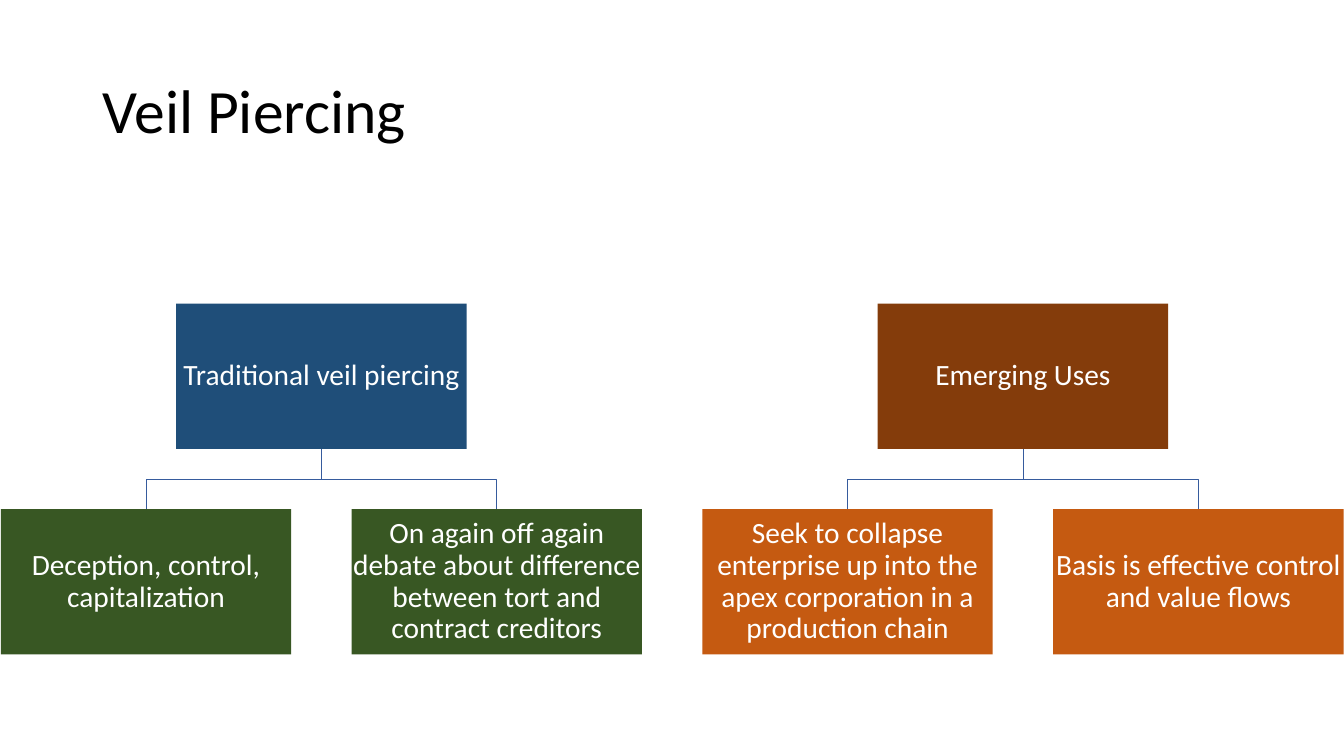
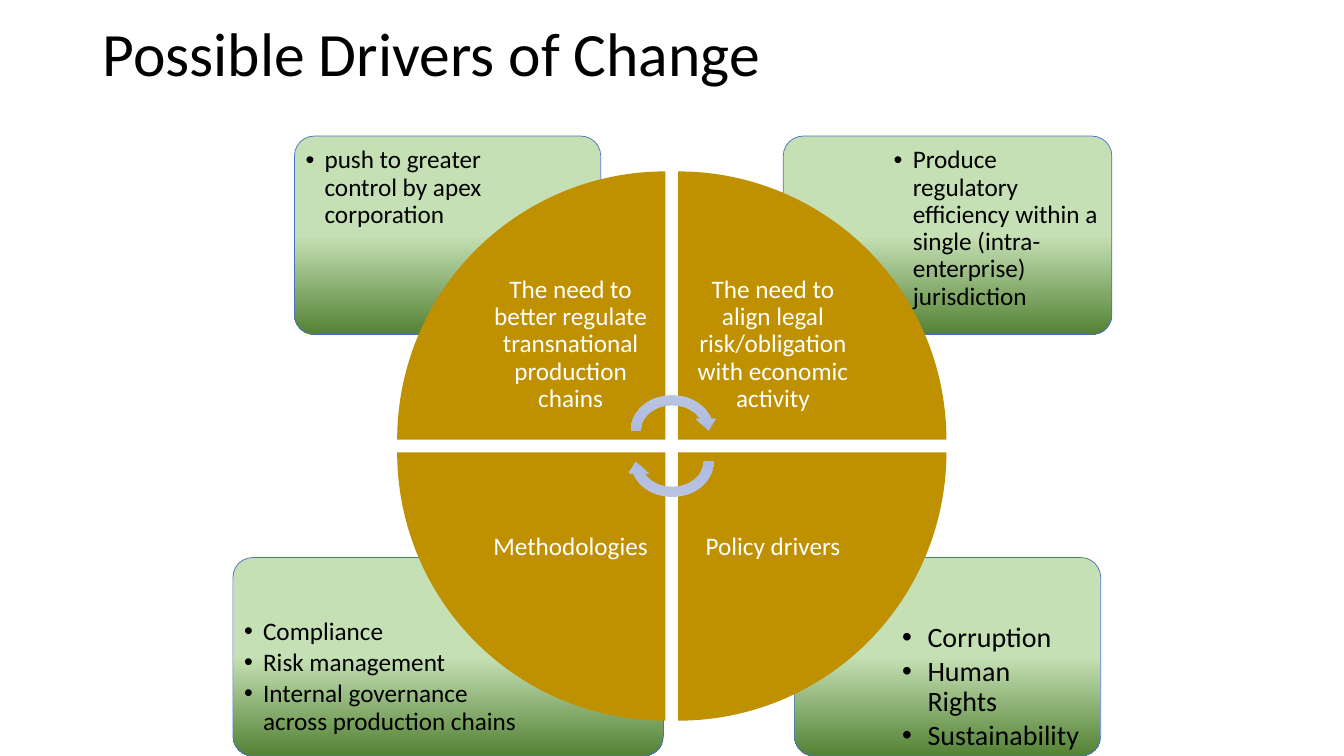
from copy import deepcopy

from lxml.etree import SubElement
from pptx import Presentation
from pptx.dml.color import RGBColor as Rgb
from pptx.enum.shapes import MSO_SHAPE as Kind
from pptx.enum.text import MSO_ANCHOR as Anchor, MSO_AUTO_SIZE as Fit, PP_ALIGN as Align
from pptx.oxml.ns import qn
from pptx.util import Cm, Pt

HUES = {
    "black": "000000", "white": "FFFFFF", "edge": "4472C4", "link": "365B9D",
    "navy": "1F4E79", "green": "385723", "brown": "843C0B", "orange": "C55A11",
    "gold": "BF9000", "pale": "C5E0B4", "leaf": "548235",
    "sky": "BBC5E3", "mist": "AEBBE0", "steel": "98A4CB",
}
TONES = {name: Rgb.from_string(code) for name, code in HUES.items()}

MIDDLE = {"vertical_anchor": Anchor.MIDDLE}
TOP = {"vertical_anchor": Anchor.TOP}
CENTER = {"alignment": Align.CENTER, "line_spacing": 0.9}
LEFT = {"alignment": Align.LEFT, "line_spacing": 0.9}
ITEM = {**LEFT, "space_after": Pt(2.7)}


def write(frame, lines, size, tone, box, para, inset=None, dent=None):
    """Fill a text frame; inset and dent are in cm, and dent adds bullets."""
    look = {"word_wrap": True, "auto_size": Fit.NONE, **box}
    if inset is not None:
        for side in ("left", "top", "right", "bottom"):
            look[f"margin_{side}"] = Cm(inset)
    for key, val in look.items():
        setattr(frame, key, val)
    for num, line in enumerate(lines):
        par = frame.add_paragraph() if num else frame.paragraphs[0]
        if dent:
            props = par._p.get_or_add_pPr()
            props.set("marL", str(Cm(dent)))
            props.set("indent", str(-Cm(dent)))
            SubElement(props, qn("a:buFont"), typeface="Arial")
            SubElement(props, qn("a:buChar"), char="•")
        for key, val in para.items():
            setattr(par, key, val)
        run = par.add_run()
        run.text = line
        run.font.color.rgb = TONES[tone]
        for key, val in {"name": "Calibri", "size": Pt(size)}.items():
            setattr(run.font, key, val)


def draw(slide, kind, spot, stops, edge=None):
    """Add a shape at spot (cm); stops holds (place, colour) pairs or one colour name."""
    shape = slide.shapes.add_shape(kind, *map(Cm, spot))
    shape.shadow.inherit = False
    if isinstance(stops, str):
        shape.fill.solid()
        shape.fill.fore_color.rgb = TONES[stops]
    else:
        shape.fill.gradient()
        shape.fill.gradient_angle = 270
        ramp = shape._element.spPr.find(qn("a:gradFill")).find(qn("a:gsLst"))
        while len(ramp) < len(stops):
            ramp.append(deepcopy(ramp[0]))
        for stop, (place, tone) in zip(shape.fill.gradient_stops, stops):
            stop.position = place
            stop.color.rgb = TONES[tone]
    if edge:
        shape.line.color.rgb = TONES[edge]
        shape.line.width = Pt(0.5)
    else:
        shape.line.fill.background()
    return shape


deck = Presentation()
deck.slide_width, deck.slide_height = Cm(33.87), Cm(19.05)

slides = []
for name, top, high in (("Veil Piercing", 1.01, 3.68),
                        ("Possible Drivers of Change", 0, 2.84)):
    slide = deck.slides.add_slide(deck.slide_layouts[5])
    title = slide.shapes.title
    spot = {"left": 2.33, "top": top, "width": 29.21, "height": high}
    for key, val in spot.items():
        setattr(title, key, Cm(val))
    write(title.text_frame, [name], 44, "black", MIDDLE, LEFT)
    slides.append(slide)
tree, wheel = slides

# Two trees, each with one root over two leaves
WIDE, HIGH, STEP, EDGE = 7.32, 3.66, 8.84, 0.02
ROOT, LEAF = 7.65, 12.83
trees = [
    ("Traditional veil piercing", "navy", "green",
     ["Deception, control, capitalization",
      "On again off again debate about difference between tort and contract creditors"]),
    ("Emerging Uses", "brown", "orange",
     ["Seek to collapse enterprise up into the apex corporation in a production chain",
      "Basis is effective control and value flows"]),
]
for num, (head, dark, tone, leaves) in enumerate(trees):
    left = EDGE + 2 * num * STEP
    root = left + STEP / 2
    boxes = [(head, root, ROOT, dark)]
    boxes += [(leaf, left + col * STEP, LEAF, tone) for col, leaf in enumerate(leaves)]
    stem, foot = root + WIDE / 2, ROOT + HIGH
    bend = (foot + LEAF) / 2
    for text, x, y, fill in boxes:
        if y == LEAF:
            mid = x + WIDE / 2
            pen = tree.shapes.build_freeform(Cm(stem), Cm(foot))
            pen.add_line_segments([(Cm(stem), Cm(bend)), (Cm(mid), Cm(bend)),
                                   (Cm(mid), Cm(LEAF))], close=False)
            link = pen.convert_to_shape()
            link.shadow.inherit = False
            link.fill.background()
            link.line.color.rgb = TONES["link"]
            link.line.width = Pt(0.5)
        box = draw(tree, Kind.RECTANGLE, (x, y, WIDE, HIGH), fill)
        write(box.text_frame, [text], 21, "white", MIDDLE, CENTER, 0.03)

# Corner panels: left, top, width, on the right, text size, inset, indent, items
panels = [
    (20.02, 14.05, 7.72, True, 20, 0.28, 0.64,
     ["Corruption", "Human Rights", "Sustainability"]),
    (5.87, 14.05, 10.85, False, 18, 0.18, 0.48,
     ["Compliance", "Risk management",
      "Internal governance across production chains"]),
    (19.74, 3.43, 8.28, True, 18, 0.18, 0.48,
     ["Produce regulatory efficiency within a single (intra-enterprise) jurisdiction"]),
    (7.42, 3.43, 7.72, False, 18, 0.18, 0.48,
     ["push to greater control by apex corporation"]),
]
for x, y, wide, right, size, inset, dent, items in panels:
    panel = draw(wheel, Kind.ROUNDED_RECTANGLE, (x, y, wide, 5),
                 [(0, "pale"), (0.5, "pale"), (1, "leaf")], "edge")
    panel.adjustments[0] = 0.1
    span = 0.7 * wide - 0.22
    left = x + wide - span - 0.1 if right else x + 0.1
    top = y + (1.37 if y > 10 else 0.1)
    note = wheel.shapes.add_textbox(Cm(left), Cm(top), Cm(span), Cm(3.53))
    write(note.text_frame, items, size, "black", TOP, ITEM, inset, dent)

# Wheel of four quarters, clockwise from top left
SIDE, PITCH, INNER = 6.76, 7.08, 4.78
quarters = [
    (0, 0, "The need to better regulate transnational production chains"),
    (1, 0, "The need to align legal risk/obligation with economic activity"),
    (1, 1, "Policy drivers"),
    (0, 1, "Methodologies"),
]
for num, (col, row, text) in enumerate(quarters):
    x, y = 10.01 + col * PITCH, 4.32 + row * PITCH
    wedge = draw(wheel, Kind.PIE_WEDGE, (x, y, SIDE, SIDE), "gold")
    wedge.rotation = 90 * num
    left = x + (1 - col) * (SIDE - INNER)
    top = y + (1 - row) * (SIDE - INNER)
    label = wheel.shapes.add_textbox(Cm(left), Cm(top), Cm(INNER), Cm(INNER))
    write(label.text_frame, [text], 18, "white", MIDDLE, CENTER, 0.36)

for top, turn in ((9.83, 0), (10.62, 180)):
    arrow = draw(wheel, Kind.CIRCULAR_ARROW, (15.77, top, 2.34, 2.03),
                 [(0, "sky"), (0.5, "mist"), (1, "steel")])
    arrow.rotation = turn

deck.save("out.pptx")
